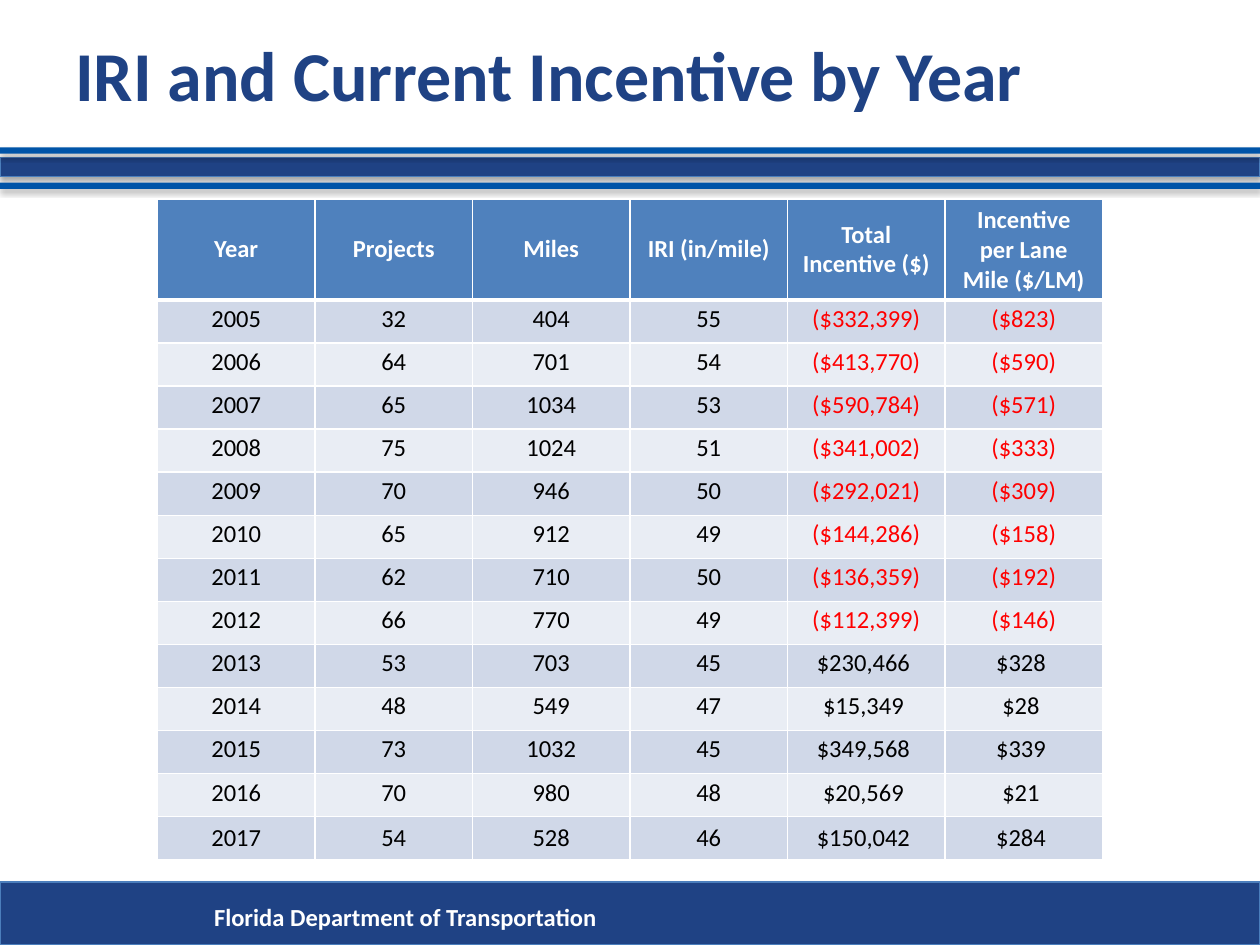
from pptx import Presentation
from pptx.dml.color import RGBColor
from pptx.enum import shapes, text
from pptx.oxml import parse_xml
from pptx.oxml.ns import nsdecls, qn
from pptx.util import Pt

THEME = {
    "font": "Calibri", "title": 40, "body": 14,
    "navy": "1F4284", "blue": "0054A8", "edge": "4B7EBC", "header": "4F81BD",
    "bands": ("D0D8E8", "E9EDF4"),
    "white": "FFFFFF", "black": "000000", "loss": "FF0000",
}


def write(frame, words, size, colour, bold, align=text.PP_ALIGN.LEFT):
    """Put one formatted paragraph in a text frame."""
    line = frame.paragraphs[0]
    line.alignment = align
    run = line.add_run()
    run.text = words
    run.font.color.rgb = RGBColor.from_string(colour)
    for key, value in {"name": THEME["font"], "size": Pt(size), "bold": bold}.items():
        setattr(run.font, key, value)


def dollars(amount):
    """Accounting style: losses in brackets, gains padded to match."""
    return f"(${-amount:,})" if amount < 0 else f"${amount:,} "


deck = Presentation()
deck.slide_width, deck.slide_height = Pt(720), Pt(540)
slide = deck.slides.add_slide(deck.slide_layouts[6])

# Bands under the title and at the foot: top, height, fill, outline
for top, height, fill, edge in [
    (90, 10.8, "navy", "edge"),
    (104.4, 3.6, "blue", None),
    (84.24, 3.6, "blue", None),
    (504, 36, "navy", "edge"),
]:
    band = slide.shapes.add_shape(
        shapes.MSO_SHAPE.RECTANGLE, Pt(0), Pt(top), Pt(720), Pt(height))
    band.fill.solid()
    band.fill.fore_color.rgb = RGBColor.from_string(THEME[fill])
    if edge:
        band.line.color.rgb = RGBColor.from_string(THEME[edge])
        band.line.width = Pt(0.75)
    else:
        band.line.fill.background()
    band.shadow.inherit = False
    band._element.spPr.find(qn("a:effectLst")).append(parse_xml(
        f'<a:outerShdw {nsdecls("a")} blurRad="{Pt(3.1)}" dist="{Pt(1.8)}" dir="5400000" '
        f'rotWithShape="0"><a:srgbClr val="{THEME["black"]}"><a:alpha val="35000"/>'
        '</a:srgbClr></a:outerShdw>'))

# Title and footer
for words, left, top, width, height, size, colour, anchor in [
    ("Florida Department of Transportation", 115.2, 511.92, 574.56, 24.48,
     "body", "white", text.MSO_ANCHOR.TOP),
    ("IRI and Current Incentive by Year", 36, 0.72, 648, 82.08,
     "title", "navy", text.MSO_ANCHOR.MIDDLE),
]:
    frame = slide.shapes.add_textbox(Pt(left), Pt(top), Pt(width), Pt(height)).text_frame
    frame.word_wrap = True
    frame.vertical_anchor = anchor
    write(frame, words, THEME[size], THEME[colour], True)

# Incentive table
headings = ["Year", "Projects", "Miles", "IRI (in/mile)",
            "Total Incentive ($)", "Incentive per Lane Mile ($/LM)"]
years = [
    (2005, 32, 404, 55, -332399, -823),
    (2006, 64, 701, 54, -413770, -590),
    (2007, 65, 1034, 53, -590784, -571),
    (2008, 75, 1024, 51, -341002, -333),
    (2009, 70, 946, 50, -292021, -309),
    (2010, 65, 912, 49, -144286, -158),
    (2011, 62, 710, 50, -136359, -192),
    (2012, 66, 770, 49, -112399, -146),
    (2013, 53, 703, 45, 230466, 328),
    (2014, 48, 549, 47, 15349, 28),
    (2015, 73, 1032, 45, 349568, 339),
    (2016, 70, 980, 48, 20569, 21),
    (2017, 54, 528, 46, 150042, 284),
]
HEADER_HEIGHT, ROW_HEIGHT = 54.72, 24.62
table = slide.shapes.add_table(
    len(years) + 1, len(headings), Pt(90), Pt(113.76), Pt(540),
    Pt(HEADER_HEIGHT + ROW_HEIGHT * len(years))).table
for column in table.columns:
    column.width = Pt(90)
for r, row in enumerate(table.rows):
    row.height = Pt(ROW_HEIGHT if r else HEADER_HEIGHT)

for r, values in enumerate([headings] + years):
    for c, value in enumerate(values):
        cell = table.cell(r, c)
        layout = {"vertical_anchor": text.MSO_ANCHOR.MIDDLE}
        if r == 0:
            words, fill, colour = value, THEME["header"], THEME["white"]
        else:
            words = dollars(value) if c > 3 else str(value)
            fill = THEME["bands"][(r - 1) % 2]
            colour = THEME["loss"] if value < 0 else THEME["black"]
            layout.update(margin_left=Pt(0.72), margin_top=Pt(0.72),
                          margin_right=Pt(0.72), margin_bottom=Pt(3.6))
            if r == len(years):
                layout["vertical_anchor"] = text.MSO_ANCHOR.BOTTOM
        for key, setting in layout.items():
            setattr(cell, key, setting)

        # White rules, heavier between the headings and the years
        for side, weight in {"L": 1, "R": 1, "T": 3 if r == 1 else 1,
                             "B": 3 if r == 0 else 1}.items():
            cell._tc.get_or_add_tcPr().append(parse_xml(
                f'<a:ln{side} {nsdecls("a")} w="{Pt(weight)}"><a:solidFill>'
                f'<a:srgbClr val="{THEME["white"]}"/></a:solidFill></a:ln{side}>'))
        cell.fill.solid()
        cell.fill.fore_color.rgb = RGBColor.from_string(fill)
        write(cell.text_frame, words, THEME["body"], colour, r == 0, text.PP_ALIGN.CENTER)

deck.save("out.pptx")
